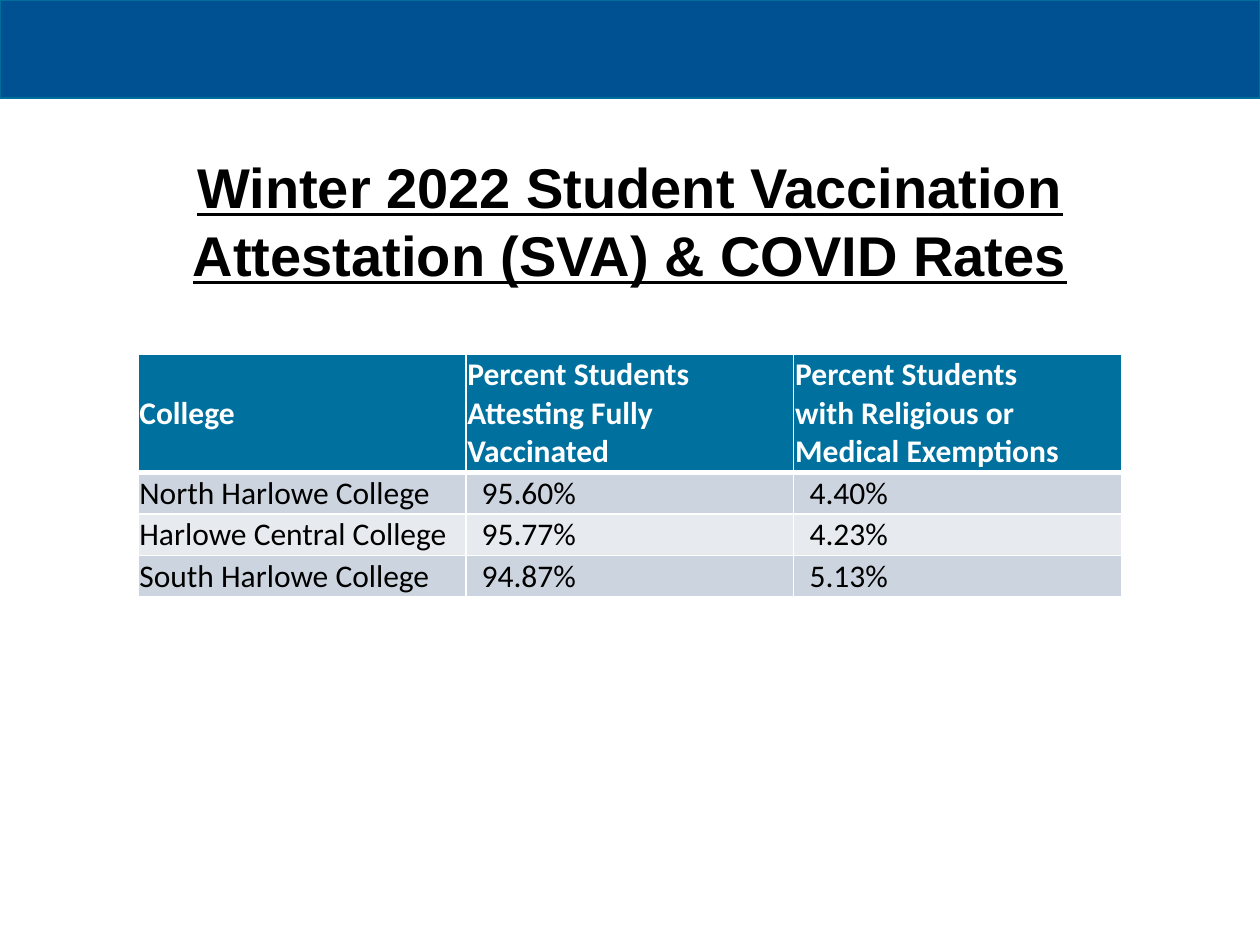
from lxml import etree
from pptx import Presentation
from pptx.dml.color import RGBColor
from pptx.enum import shapes, text
from pptx.oxml import ns
from pptx.util import Cm, Pt

BANNER_BLUE = RGBColor(0x00, 0x51, 0x92)
BANNER_EDGE = RGBColor(0x00, 0x6F, 0x9B)
HEADER_BLUE = RGBColor(0x00, 0x71, 0x9F)
BAND_DARK = RGBColor(0xCC, 0xD5, 0xDF)
BAND_LIGHT = RGBColor(0xE7, 0xEB, 0xF0)
WHITE = RGBColor(0xFF, 0xFF, 0xFF)
BLACK = RGBColor(0x00, 0x00, 0x00)

MARGIN = Cm(0.03)
RATE_INDENT = Cm(0.32)
ROWS = [
    ("College",
     "Percent Students\vAttesting Fully Vaccinated",
     "Percent Students\vwith Religious or Medical Exemptions"),
    ("North Harlowe College", "95.60%", "4.40%"),
    ("Harlowe Central College", "95.77%", "4.23%"),
    ("South Harlowe College", "94.87%", "5.13%"),
]


def style_font(font, name, size, color, bold):
    """Apply typeface, size, colour and weight to a font."""
    font.name, font.size, font.bold = name, Pt(size), bold
    font.color.rgb = color


def add_banner(page, width):
    """Draw the blue band across the top of the page."""
    banner = page.shapes.add_shape(
        shapes.MSO_SHAPE.RECTANGLE, 0, 0, width, Cm(1.98))
    banner.shadow.inherit = False
    banner.fill.solid()
    banner.fill.fore_color.rgb = BANNER_BLUE
    banner.line.color.rgb = BANNER_EDGE
    banner.line.width = Pt(0.75)


def set_title(page, wording):
    """Place and format the underlined heading."""
    title = page.shapes.title
    title.left, title.top = Cm(1.27), Cm(2.95)
    title.width, title.height = Cm(22.86), Cm(2.97)
    frame = title.text_frame
    frame.text = wording
    frame.auto_size = text.MSO_AUTO_SIZE.NONE
    frame.vertical_anchor = text.MSO_ANCHOR.MIDDLE
    para = frame.paragraphs[0]
    para.alignment = text.PP_ALIGN.CENTER
    style_font(para.font, "Arial", 32, BLACK, True)
    para.font.underline = True


def set_borders(cell, top, bottom):
    """Give a cell white borders ahead of its fill."""
    properties = cell._tc.get_or_add_tcPr()
    sides = {"lnL": 1, "lnR": 1, "lnT": top, "lnB": bottom}
    for index, (side, points) in enumerate(sides.items()):
        line = etree.Element(ns.qn(f"a:{side}"), w=str(Pt(points)))
        fill = etree.SubElement(line, ns.qn("a:solidFill"))
        etree.SubElement(fill, ns.qn("a:srgbClr"), val=str(WHITE))
        properties.insert(index, line)


def fill_cell(cell, wording, row, column):
    """Write and format one cell by its place in the table."""
    header = row == 0
    cell.text = wording
    cell.vertical_anchor = text.MSO_ANCHOR.MIDDLE
    cell.margin_left = cell.margin_right = MARGIN
    cell.margin_top = cell.margin_bottom = MARGIN
    if column and not header:
        cell.margin_left = RATE_INDENT
    cell.fill.solid()
    band = BAND_DARK if row % 2 else BAND_LIGHT
    cell.fill.fore_color.rgb = HEADER_BLUE if header else band
    style_font(cell.text_frame.paragraphs[0].font, "Calibri", 18,
               WHITE if header else BLACK, header)
    set_borders(cell, 3 if row == 1 else 1, 3 if header else 1)


def add_rate_table(page, rows):
    """Add the table of vaccination rates by college."""
    table = page.shapes.add_table(
        len(rows), len(rows[0]), Cm(2.78), Cm(7.14), Cm(19.83), Cm(4.8)).table
    for column in table.columns:
        column.width = Cm(6.61)
    for row, values in enumerate(rows):
        table.rows[row].height = Cm(0.8) if row else Cm(2.3)
        for column, wording in enumerate(values):
            fill_cell(table.cell(row, column), wording, row, column)


def main():
    """Build the deck and save it."""
    deck = Presentation()
    deck.slide_width, deck.slide_height = Cm(25.4), Cm(19.05)
    page = deck.slides.add_slide(deck.slide_layouts.get_by_name("Title Only"))
    add_banner(page, deck.slide_width)
    set_title(page, "Winter 2022 Student Vaccination Attestation (SVA) & COVID Rates")
    add_rate_table(page, ROWS)
    deck.save("out.pptx")


if __name__ == "__main__":
    main()
